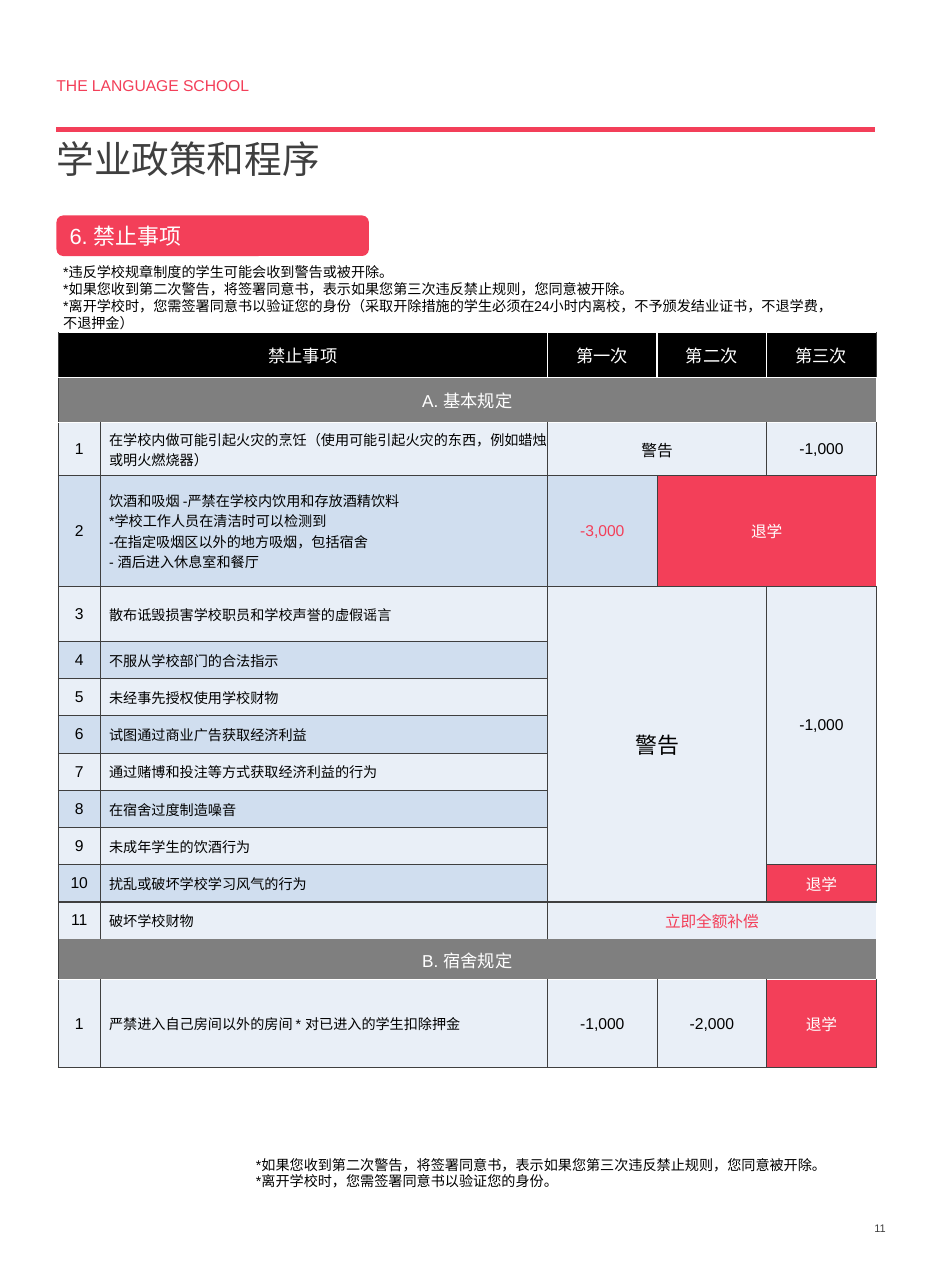
from lxml import etree
from pptx import Presentation
from pptx.dml.color import RGBColor
from pptx.enum.shapes import MSO_CONNECTOR, MSO_SHAPE
from pptx.enum.text import MSO_ANCHOR, MSO_AUTO_SIZE, PP_ALIGN
from pptx.oxml.ns import qn
from pptx.util import Inches, Pt

LEFT, CENTER, RIGHT = PP_ALIGN.LEFT, PP_ALIGN.CENTER, PP_ALIGN.RIGHT
TOP, MIDDLE = MSO_ANCHOR.TOP, MSO_ANCHOR.MIDDLE
NO_FIT = MSO_AUTO_SIZE.NONE
STRAIGHT = MSO_CONNECTOR.STRAIGHT
ROUNDED = MSO_SHAPE.ROUNDED_RECTANGLE

WIDTH, HEIGHT = Inches(8.27), Inches(11.42)
FONT = "Arial"
COLORS = {
    "red": "F33F59", "dark": "3F3F3F", "black": "000000", "white": "FFFFFF",
    "section": "7F7F7F", "light": "E9EFF7", "blue": "D0DEEF",
}
PADDED = (0.1, 0.05, 0.1, 0.05)
HEADING = (0, 0, 0, 0.05)
INDENTED = (0.08, 0, 0, 0)
TIGHT = (0, 0, 0, 0)

COLUMN_WEIGHTS = [37, 396, 97, 97, 97]
ROW_WEIGHTS = [40, 40, 47, 98, 49] + [33] * 8 + [36, 78]
SECTION_A, SECTION_B = 1, 13

SIGNING = "*如果您收到第二次警告，将签署同意书，表示如果您第三次违反禁止规则，您同意被开除。"
INTRO = [
    "*违反学校规章制度的学生可能会收到警告或被开除。",
    SIGNING,
    "*离开学校时，您需签署同意书以验证您的身份（采取开除措施的学生必须在24小时内离校，不予颁发结业证书，不退学费，不退押金）",
]
CLOSING = [SIGNING, "*离开学校时，您需签署同意书以验证您的身份。"]

BASIC_RULES = [
    ["在学校内做可能引起火灾的烹饪（使用可能引起火灾的东西，例如蜡烛或明火燃烧器）"],
    ["饮酒和吸烟 -严禁在学校内饮用和存放酒精饮料", "*学校工作人员在清洁时可以检测到",
     "-在指定吸烟区以外的地方吸烟，包括宿舍", "- 酒后进入休息室和餐厅"],
    ["散布诋毁损害学校职员和学校声誉的虚假谣言"],
    ["不服从学校部门的合法指示"],
    ["未经事先授权使用学校财物"],
    ["试图通过商业广告获取经济利益"],
    ["通过赌博和投注等方式获取经济利益的行为"],
    ["在宿舍过度制造噪音"],
    ["未成年学生的饮酒行为"],
    ["扰乱或破坏学校学习风气的行为"],
    ["破坏学校财物"],
]
DORMITORY_RULES = [["严禁进入自己房间以外的房间 * 对已进入的学生扣除押金"]]

PENALTIES = [
    (2, 2, 1, 2, "警告", "light", "black", 10),
    (2, 4, 1, 1, "-1,000", "light", "black", 10),
    (3, 2, 1, 1, "-3,000", "blue", "red", 10),
    (3, 3, 1, 2, "退学", "red", "white", 10),
    (4, 2, 8, 2, "警告", "light", "black", 14),
    (4, 4, 7, 1, "-1,000", "light", "black", 10),
    (11, 4, 1, 1, "退学", "red", "white", 10),
    (12, 2, 1, 3, "立即全额补偿", "light", "red", 10),
    (14, 2, 1, 1, "-1,000", "light", "black", 10),
    (14, 3, 1, 1, "-2,000", "light", "black", 10),
    (14, 4, 1, 1, "退学", "red", "white", 10),
]


def rgb(name):
    return RGBColor.from_string(COLORS[name])


def area(left, top, width, height):
    return (round(WIDTH * left / 100), round(HEIGHT * top / 100),
            round(WIDTH * width / 100), round(HEIGHT * height / 100))


def write(holder, lines, size=9, color="black", align=LEFT, anchor=TOP,
          margins=PADDED, spacing=None, unbulleted=False):
    holder.margin_left, holder.margin_top, holder.margin_right, holder.margin_bottom = map(Inches, margins)
    holder.vertical_anchor = anchor
    frame = getattr(holder, "text_frame", holder)
    frame.word_wrap = True
    for index, line in enumerate(lines):
        paragraph = frame.add_paragraph() if index else frame.paragraphs[0]
        paragraph.alignment = align
        paragraph.space_before = Pt(0)
        if spacing:
            paragraph.line_spacing = spacing
        if unbulleted:
            properties = paragraph._p.get_or_add_pPr()
            properties.set("marL", "0")
            properties.set("indent", "0")
            etree.SubElement(properties, qn("a:buNone"))
        run = paragraph.add_run()
        run.text = line
        run.font.size = Pt(size)
        run.font.name = FONT
        run.font.color.rgb = rgb(color)


def add_label(slide, place, lines, **style):
    label = slide.shapes.add_textbox(*area(*place))
    write(label.text_frame, lines, **style)


def fill_placeholder(holder, place, lines, **style):
    holder.left, holder.top, holder.width, holder.height = area(*place)
    holder.text_frame.auto_size = NO_FIT
    write(holder.text_frame, lines, **style)


def add_divider(slide, left, right, top):
    start, level, width, _ = area(left, top, right - left, 0)
    divider = slide.shapes.add_connector(STRAIGHT, start, level, start + width, level)
    divider.line.color.rgb = rgb("red")
    divider.line.width = Pt(3)
    etree.SubElement(divider._element.spPr, qn("a:effectLst"))


def add_badge(slide, place, text):
    badge = slide.shapes.add_shape(ROUNDED, *area(*place))
    badge.shadow.inherit = False
    badge.fill.solid()
    badge.fill.fore_color.rgb = rgb("red")
    badge.line.fill.background()
    write(badge.text_frame, [text], size=14, color="white", anchor=MIDDLE)


def table_entries():
    def entry(row, column, lines, fill, rows=1, columns=1, **style):
        return row, column, rows, columns, lines, fill, style

    header = dict(size=11, color="white", align=CENTER)
    entries = [entry(0, 0, ["禁止事项"], "black", columns=2, **header)]
    for column, title in enumerate(["第一次", "第二次", "第三次"], 2):
        entries.append(entry(0, column, [title], "black", **header))
    for row, title, rules in [(SECTION_A, "A. 基本规定", BASIC_RULES),
                              (SECTION_B, "B. 宿舍规定", DORMITORY_RULES)]:
        entries.append(entry(row, 0, [title], "section", columns=5, **header))
        for number, rule in enumerate(rules, 1):
            band = "light" if number % 2 else "blue"
            entries.append(entry(row + number, 0, [str(number)], band, size=10, align=CENTER))
            entries.append(entry(row + number, 1, rule, band, margins=INDENTED, spacing=Pt(13)))
    for row, column, rows, columns, text, fill, color, size in PENALTIES:
        entries.append(entry(row, column, [text], fill, rows, columns,
                             size=size, color=color, align=CENTER, margins=TIGHT))
    return entries


def horizontal_color(level):
    if level == SECTION_B:
        return None
    return "white" if level in (0, 1, SECTION_A + 1, SECTION_B + 1) else "dark"


def vertical_color(row, level):
    return "white" if row == 0 and 0 < level < len(COLUMN_WEIGHTS) else "dark"


def set_borders(cell, colors):
    properties = cell._tc.get_or_add_tcPr()
    for index, (side, color) in enumerate(zip("LRTB", colors)):
        border = etree.Element(qn("a:ln" + side))
        if color:
            border.set("w", str(Pt(1 if color == "white" else 0.75)))
            paint = etree.SubElement(border, qn("a:solidFill"))
            etree.SubElement(paint, qn("a:srgbClr"), val=COLORS[color])
        else:
            etree.SubElement(border, qn("a:noFill"))
        properties.insert(index, border)


def add_rules_table(slide, place):
    left, top, width, height = area(*place)
    table = slide.shapes.add_table(len(ROW_WEIGHTS), len(COLUMN_WEIGHTS), left, top, width, height).table
    for column, weight in zip(table.columns, COLUMN_WEIGHTS):
        column.width = round(width * weight / sum(COLUMN_WEIGHTS))
    for row, weight in zip(table.rows, ROW_WEIGHTS):
        row.height = round(height * weight / sum(ROW_WEIGHTS))
    for row, column, rows, columns, lines, fill, style in table_entries():
        bottom, right = row + rows, column + columns
        if rows * columns > 1:
            table.cell(row, column).merge(table.cell(bottom - 1, right - 1))
        write(table.cell(row, column), lines, anchor=MIDDLE, **style)
        for y in range(row, bottom):
            for x in range(column, right):
                cell = table.cell(y, x)
                cell.fill.solid()
                cell.fill.fore_color.rgb = rgb(fill)
                set_borders(cell, [
                    vertical_color(y, x) if x == column else None,
                    vertical_color(y, x + 1) if x + 1 == right else None,
                    horizontal_color(y) if y == row else None,
                    horizontal_color(y + 1) if y + 1 == bottom else None,
                ])


def main():
    deck = Presentation()
    deck.slide_width, deck.slide_height = WIDTH, HEIGHT
    slide = deck.slides.add_slide(deck.slide_layouts[1])
    add_label(slide, (73.64, 92.64, 22.49, 5.34), ["11"], size=7, color="dark", align=RIGHT, anchor=MIDDLE)
    add_rules_table(slide, (6.25, 25.83, 87.67, 57.09))
    add_label(slide, (26.24, 89.32, 68.68, 3.5), CLOSING, spacing=Pt(10.8))
    add_label(slide, (6.05, 4.99, 25.39, 2.28), ["THE LANGUAGE SCHOOL"],
              size=10, color="red", margins=HEADING, spacing=1.6)
    add_divider(slide, 6.05, 93.83, 10.07)
    fill_placeholder(slide.shapes.title, (6.05, 11.38, 73.4, 3.06), ["学业政策和程序"],
                     size=24, color="dark", margins=HEADING, spacing=0.75)
    add_badge(slide, (6.05, 16.73, 33.49, 3.15), "6. 禁止事项")
    fill_placeholder(slide.placeholders[1], (5.56, 20.05, 85.25, 6.22), INTRO,
                     spacing=Pt(10.8), unbulleted=True)
    deck.save("out.pptx")


if __name__ == "__main__":
    main()
